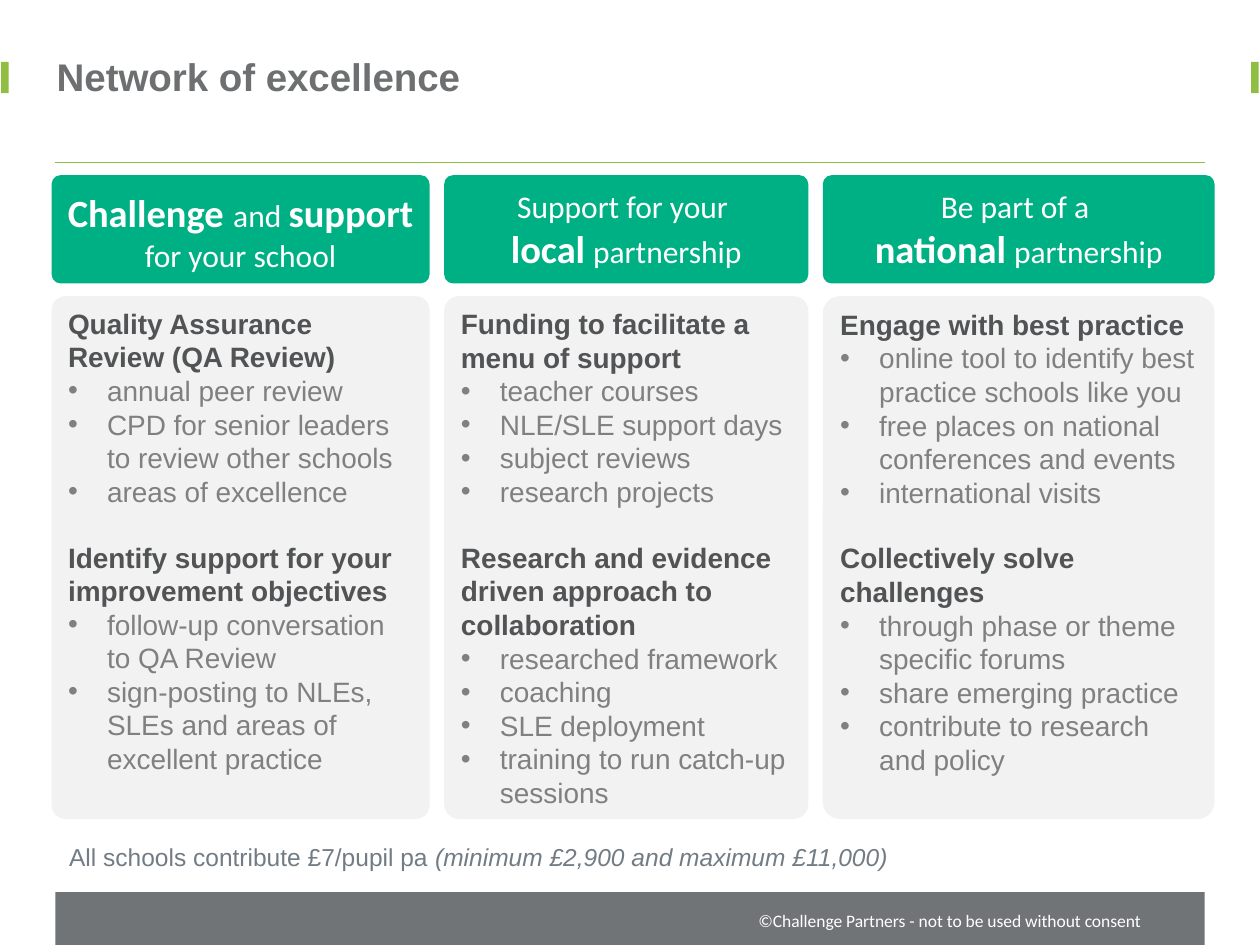
from lxml import etree
from pptx import Presentation
from pptx import util as u
from pptx.dml.color import RGBColor
from pptx.enum import shapes, text
from pptx.oxml.ns import qn

WHITE = RGBColor(0xFF, 0xFF, 0xFF)
LIME = RGBColor(0x90, 0xBE, 0x43)
GREEN = RGBColor(0x00, 0xB0, 0x85)
PALE = RGBColor(0xF2, 0xF2, 0xF2)
SLATE = RGBColor(0x70, 0x74, 0x76)
TITLE_GREY = RGBColor(0x6D, 0x6F, 0x71)
HEADING_GREY = RGBColor(0x52, 0x53, 0x55)
BULLET_GREY = RGBColor(0x80, 0x80, 0x80)
NOTE_GREY = RGBColor(0x72, 0x7C, 0x84)

TITLE = "Network of excellence"
COPYRIGHT = "©Challenge Partners - not to be used without consent"
FEES = [("All schools contribute £7/pupil pa ", False),
        ("(minimum £2,900 and maximum £11,000)", True)]

PILLARS = [
    {
        "width": 3.0, "corner": 0.037,
        "header": [[("Challenge", 22, True), (" ", 24, True), ("and ", 18, False),
                    ("support", 22, True), (" ", 20, True),
                    ("for your school", 18, False)]],
        "sections": [
            ("Quality Assurance Review (QA Review)",
             ["annual peer review",
              "CPD for senior leaders to review other schools",
              "areas of excellence"]),
            ("Identify support for your improvement objectives",
             ["follow-up conversation to QA Review",
              "sign-posting to NLEs, SLEs and areas of excellent practice"]),
        ],
    },
    {
        "width": 2.89, "corner": 0.041,
        "header": [[("Support for your ", 18, False)],
                   [("local", 22, True), (" ", 20, True), ("partnership", 18, False)]],
        "sections": [
            ("Funding to facilitate a menu of support",
             ["teacher courses", "NLE/SLE support days",
              "subject reviews", "research projects"]),
            ("Research and evidence driven approach to collaboration",
             ["researched framework", "coaching", "SLE deployment",
              "training to run catch-up sessions"]),
        ],
    },
    {
        "width": 3.11, "corner": 0.044,
        "header": [[("Be part of a ", 18, False)],
                   [("national", 22, True), (" ", 20, False), ("partnership", 18, False)]],
        "sections": [
            ("Engage with best practice",
             ["online tool to identify best practice schools like you",
              "free places on national conferences and events",
              "international visits"]),
            ("Collectively solve challenges",
             ["through phase or theme specific forums",
              "share emerging practice",
              "contribute to research and policy"]),
        ],
    },
]

SLIDE_W, SLIDE_H = 10, 7.5
LEFT, GAP = 0.41, 0.115
HEADER_TOP, HEADER_H = 1.39, 0.86
PANEL_TOP, PANEL_H = 2.35, 4.15
BAND_LEFT, BAND_W, BAND_H = 0.44, 9.12, 0.42
ACCENT_W, ACCENT_EDGE = 0.06, 0.01
INDENT = u.Inches(0.31)
SECTION_GAP = u.Pt(18.4)


def add_block(slide, kind, box, color, corner=None):
    block = slide.shapes.add_shape(kind, *map(u.Inches, box))
    block.shadow.inherit = False
    block.fill.solid()
    block.fill.fore_color.rgb = color
    block.line.fill.background()
    if corner is not None:
        block.adjustments[0] = corner
        block.text_frame.word_wrap = True
    return block


def add_run(paragraph, words, size, font, color, bold=False, italic=False):
    run = paragraph.add_run()
    run.text = words
    run.font.size = u.Pt(size)
    run.font.name = font
    run.font.color.rgb = color
    run.font.bold = bold
    run.font.italic = italic


def next_paragraph(frame, align=text.PP_ALIGN.LEFT):
    first = frame.paragraphs[0]
    paragraph = frame.add_paragraph() if first.runs else first
    paragraph.alignment = align
    return paragraph


def add_bullet(paragraph):
    properties = paragraph._p.get_or_add_pPr()
    properties.set("marL", str(INDENT))
    properties.set("indent", str(-INDENT))
    etree.SubElement(properties, qn("a:buFont")).set("typeface", "Arial")
    etree.SubElement(properties, qn("a:buChar")).set("char", "•")


def add_header(slide, left, pillar):
    box = (left, HEADER_TOP, pillar["width"], HEADER_H)
    header = add_block(slide, shapes.MSO_SHAPE.ROUNDED_RECTANGLE, box, GREEN, 0.083)
    frame = header.text_frame
    frame.margin_left = frame.margin_right = u.Inches(0.05)
    frame.vertical_anchor = text.MSO_ANCHOR.MIDDLE
    for line in pillar["header"]:
        paragraph = next_paragraph(frame, text.PP_ALIGN.CENTER)
        for words, size, bold in line:
            add_run(paragraph, words, size, "Calibri", WHITE, bold)


def add_panel(slide, left, pillar):
    box = (left, PANEL_TOP, pillar["width"], PANEL_H)
    panel = add_block(slide, shapes.MSO_SHAPE.ROUNDED_RECTANGLE, box, PALE,
                      pillar["corner"])
    frame = panel.text_frame
    frame.vertical_anchor = text.MSO_ANCHOR.TOP
    for number, (heading, points) in enumerate(pillar["sections"]):
        paragraph = next_paragraph(frame)
        if number:
            paragraph.space_before = SECTION_GAP
        add_run(paragraph, heading, 16, "Arial", HEADING_GREY, bold=True)
        for point in points:
            paragraph = next_paragraph(frame)
            add_bullet(paragraph)
            add_run(paragraph, point, 16, "Arial", BULLET_GREY)


def add_frame(slide):
    rectangle = shapes.MSO_SHAPE.RECTANGLE
    add_block(slide, rectangle, (BAND_LEFT, SLIDE_H - BAND_H, BAND_W, BAND_H), SLATE)
    for left in (ACCENT_EDGE, SLIDE_W - ACCENT_EDGE - ACCENT_W):
        add_block(slide, rectangle, (left, 0.49, ACCENT_W, 0.25), LIME)
    ends = (BAND_LEFT, 1.29, BAND_LEFT + BAND_W, 1.29)
    rule = slide.shapes.add_connector(shapes.MSO_CONNECTOR.STRAIGHT,
                                      *map(u.Inches, ends))
    rule.line.color.rgb = LIME
    rule.line.width = u.Pt(1)
    etree.SubElement(rule._element.spPr, qn("a:effectLst"))


def add_title(slide):
    title = slide.shapes.title
    title.left, title.top, title.width, title.height = map(
        u.Inches, (0.45, 0.42, 9.3, 0.41))
    frame = title.text_frame
    frame.margin_left = frame.margin_right = frame.margin_top = frame.margin_bottom = 0
    frame.vertical_anchor = text.MSO_ANCHOR.TOP
    add_run(next_paragraph(frame), TITLE, 22, "Arial", TITLE_GREY, bold=True)


def add_notes_below(slide):
    copyright_box = slide.shapes.add_textbox(*map(u.Inches, (5.92, 7.17, 3.32, 0.27)))
    copyright_box.text_frame.word_wrap = False
    add_run(next_paragraph(copyright_box.text_frame), COPYRIGHT, 10, "Calibri", WHITE)
    fees = slide.shapes.add_textbox(*map(u.Inches, (0.45, 6.63, 9.05, 0.34)))
    fees.text_frame.word_wrap = True
    paragraph = next_paragraph(fees.text_frame)
    for words, italic in FEES:
        add_run(paragraph, words, 14, "Arial", NOTE_GREY, italic=italic)


def main():
    deck = Presentation()
    deck.slide_width, deck.slide_height = u.Inches(SLIDE_W), u.Inches(SLIDE_H)
    slide = deck.slides.add_slide(deck.slide_layouts[5])
    add_title(slide)
    add_frame(slide)
    left = LEFT
    for pillar in PILLARS:
        add_panel(slide, left, pillar)
        add_header(slide, left, pillar)
        left += pillar["width"] + GAP
    add_notes_below(slide)
    deck.save("out.pptx")


if __name__ == "__main__":
    main()
